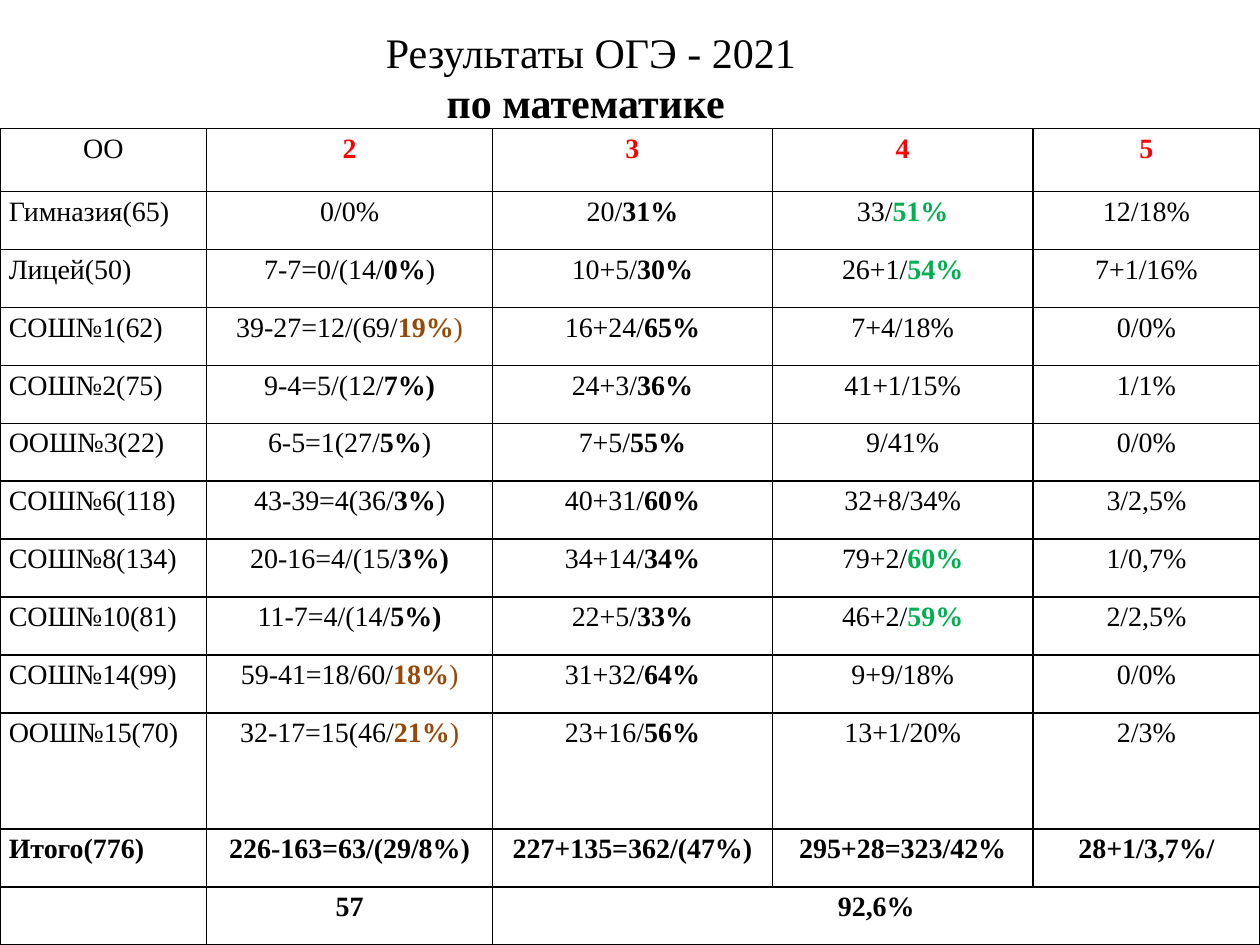
import pptx
import pptx.dml.color
import pptx.enum.text
import pptx.oxml
import pptx.oxml.ns
import pptx.util

Inches = pptx.util.Inches
Pt = pptx.util.Pt
ALIGN = pptx.enum.text.PP_ALIGN
ANCHOR = pptx.enum.text.MSO_ANCHOR

BLACK, RED, GREEN, BROWN = "000000", "FF0000", "00B050", "984806"

# Run styles, given in the texts as "key:" after a "|"
RUN_STYLES = {
    "plain": (BLACK, False),
    "bold": (BLACK, True),
    "red": (RED, True),
    "green": (GREEN, True),
    "brown": (BROWN, True),
    "end": (BROWN, False),
}

COLUMN_WIDTHS = [1.64, 2.27, 2.22, 2.07, 1.80]
HEADER_HEIGHT, ROW_HEIGHT = 0.5, 0.46

HEADER = ["ОО", "red:2", "red:3", "red:4", "red:5"]
SCHOOLS = [
    ["Гимназия(65)", "0/0%", "20/|bold:31%", "33/|green:51%", "12/18%"],
    ["Лицей(50)", "7-7=0/(14/|bold:0%|)", "10+5/|bold:30%", "26+1/|green:54%", "7+1/16%"],
    ["СОШ№1(62)", "39-27=12/(69/|brown:19%|end:)", "16+24/|bold:65%", "7+4/18%", "0/0%"],
    ["СОШ№2(75)", "9-4=5/(12/|bold:7%)", "24+3/|bold:36%", "41+1/15%", "1/1%"],
    ["ООШ№3(22)", "6-5=1(27/|bold:5%|)", "7+5/|bold:55%", "9/41%", "0/0%"],
    ["СОШ№6(118)", "43-39=4(36/|bold:3%|)", "40+31/|bold:60%", "32+8/34%", "3/2,5%"],
    ["СОШ№8(134)", "20-16=4/(15/|bold:3%)", "34+14/|bold:34%", "79+2/|green:60%", "1/0,7%"],
    ["СОШ№10(81)", "11-7=4/(14/|bold:5%)", "22+5/|bold:33%", "46+2/|green:59%", "2/2,5%"],
    ["СОШ№14(99)", "59-41=18/60/|brown:18%|end:)", "31+32/|bold:64%", "9+9/18%", "0/0%"],
    ["ООШ№15(70)", "32-17=15(46/|brown:21%|end:)", "23+16/|bold:56%", "13+1/20%", "2/3%"],
]
TOTALS = [
    ["bold:Итого(776)", "bold:226-163=63/(29/8%)", "bold:227+135=362/(47%)",
     "bold:295+28=323/42%", "bold:28+1/3,7%/"],
    ["", "bold:57", "bold:92,6%", "", ""],
]


def color(value):
    return pptx.dml.color.RGBColor.from_string(value)


def set_all(target, values):
    for name, value in values.items():
        setattr(target, name, value)


class ResultsSlide:
    font_name = "Times New Roman"
    title_size = Pt(24)
    cell_size = Pt(16)
    border_width = Pt(1)
    cell_format = {
        "margin_left": Inches(0.07), "margin_right": Inches(0.07),
        "margin_top": 0, "margin_bottom": 0,
        "vertical_anchor": ANCHOR.TOP,
    }
    title_frame = {
        "word_wrap": True, "vertical_anchor": ANCHOR.TOP,
        "auto_size": pptx.enum.text.MSO_AUTO_SIZE.NONE,
    }

    def __init__(self, presentation):
        self.slide = presentation.slides.add_slide(presentation.slide_layouts[5])

    def add_text(self, paragraph, text, size, **paragraph_format):
        set_all(paragraph, paragraph_format)
        for piece in text.split("|"):
            style, _, words = piece.rpartition(":")
            run_color, bold = RUN_STYLES[style or "plain"]
            run = paragraph.add_run()
            run.text = words
            set_all(run.font, {"name": self.font_name, "size": size, "bold": bold})
            run.font.color.rgb = color(run_color)

    def title(self, lines, left, top, width, height):
        heading = self.slide.shapes.title
        set_all(heading, {"left": Inches(left), "top": Inches(top),
                          "width": Inches(width), "height": Inches(height)})
        frame = heading.text_frame
        set_all(frame, self.title_frame)
        for index, line in enumerate(lines):
            paragraph = frame.add_paragraph() if index else frame.paragraphs[0]
            self.add_text(paragraph, line, self.title_size, alignment=ALIGN.CENTER,
                          line_spacing=1.0, space_before=Pt(0))

    def border(self, cell):
        properties = cell._tc.get_or_add_tcPr()
        for index, side in enumerate(("lnL", "lnR", "lnT", "lnB")):
            properties.insert(index, pptx.oxml.parse_xml(
                f'<a:{side} {pptx.oxml.ns.nsdecls("a")} w="{self.border_width}">'
                f'<a:solidFill><a:srgbClr val="{BLACK}"/></a:solidFill></a:{side}>'))

    def table(self, rows, heights, widths, left, top):
        results = self.slide.shapes.add_table(
            len(rows), len(widths), Inches(left), Inches(top),
            Inches(sum(widths)), Inches(sum(heights))).table
        set_all(results, {"first_row": False, "horz_banding": False})
        for column, width in zip(results.columns, widths):
            column.width = Inches(width)
        for row_index, (texts, height) in enumerate(zip(rows, heights)):
            results.rows[row_index].height = Inches(height)
            for column_index, text in enumerate(texts):
                cell = results.cell(row_index, column_index)
                set_all(cell, self.cell_format)
                cell.fill.background()
                self.border(cell)
                if text:
                    centred = column_index > 0 or row_index == 0
                    self.add_text(cell.text_frame.paragraphs[0], text, self.cell_size,
                                  alignment=ALIGN.CENTER if centred else ALIGN.LEFT,
                                  line_spacing=1.15,
                                  space_before=Pt(12 if row_index else 0))
        return results


def main():
    presentation = pptx.Presentation()
    set_all(presentation, {"slide_width": Inches(10), "slide_height": Inches(7.5)})
    slide = ResultsSlide(presentation)

    # Heading
    slide.title(["Результаты ОГЭ - 2021", "bold:по математике "], 2.19, 0.16, 5, 0.91)

    # Results by school; the last school's row is twice as high
    rows = [HEADER] + SCHOOLS + TOTALS
    heights = [HEADER_HEIGHT] + [ROW_HEIGHT] * (len(rows) - 1)
    heights[len(SCHOOLS)] = 2 * ROW_HEIGHT
    results = slide.table(rows, heights, COLUMN_WIDTHS, 0, 1.02)

    # Overall pass rate spans marks 3 to 5
    last = len(rows) - 1
    results.cell(last, 2).merge(results.cell(last, 4))

    presentation.save("out.pptx")


if __name__ == "__main__":
    main()
